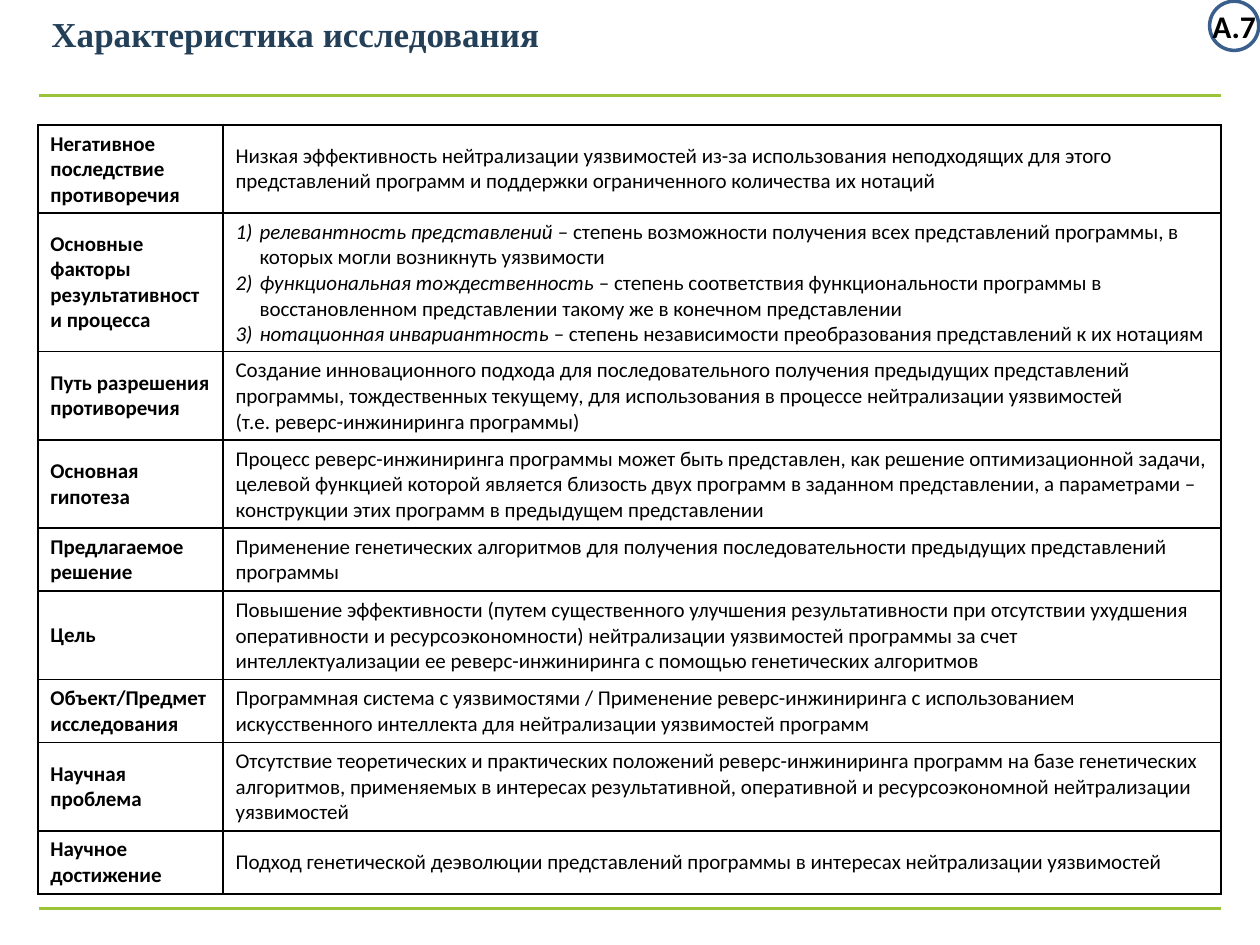
"""Build the slide with the research summary table."""
from lxml import etree
from pptx import Presentation
from pptx.dml.color import RGBColor
from pptx.enum.shapes import MSO_CONNECTOR, MSO_SHAPE
from pptx.enum.text import MSO_ANCHOR, PP_ALIGN
from pptx.oxml import parse_xml
from pptx.oxml.ns import qn
from pptx.util import Inches, Pt

LINE = MSO_CONNECTOR.STRAIGHT
OVAL = MSO_SHAPE.OVAL
MIDDLE = MSO_ANCHOR.MIDDLE
CENTER = PP_ALIGN.CENTER

BLACK = RGBColor(0, 0, 0)
WHITE = RGBColor(255, 255, 255)
GREEN = RGBColor(0x9B, 0xC4, 0x38)
BLUE = RGBColor(0x3A, 0x5F, 0x8C)
NAVY = RGBColor(0x24, 0x40, 0x58)

WIDE, HIGH = 10, 7.5
EDGE = 0.31
COLS = 1.47, 7.92
ROW = 0.41
HANG = Inches(0.19)
NS = "http://schemas.openxmlformats.org/drawingml/2006/main"

FACTORS = [
    ("релевантность представлений ",
     "– степень возможности получения всех представлений программы, "
     "в которых могли возникнуть уязвимости"),
    ("функциональная тождественность ",
     "– степень соответствия функциональности программы в восстановленном "
     "представлении такому же в конечном представлении"),
    ("нотационная инвариантность ",
     "– степень независимости преобразования представлений к их нотациям"),
]

ROWS = [
    (["Негативное последствие", "противоречия"],
     ["Низкая эффективность нейтрализации уязвимостей из-за использования "
      "неподходящих для этого представлений программ и поддержки "
      "ограниченного количества их нотаций"]),
    (["Основные факторы результативности процесса"], FACTORS),
    (["Путь разрешения противоречия"],
     ["Создание инновационного подхода для последовательного получения "
      "предыдущих представлений программы, тождественных текущему, для "
      "использования в процессе нейтрализации уязвимостей\n"
      "(т.е. реверс-инжиниринга программы)"]),
    (["Основная гипотеза"],
     ["Процесс реверс-инжиниринга программы может быть представлен, как "
      "решение оптимизационной задачи, целевой функцией которой является "
      "близость двух программ в заданном представлении, а параметрами – "
      "конструкции этих программ в предыдущем представлении"]),
    (["Предлагаемое решение"],
     ["Применение генетических алгоритмов для получения последовательности "
      "предыдущих представлений программы"]),
    (["Цель"],
     ["Повышение эффективности (путем существенного улучшения "
      "результативности при отсутствии ухудшения оперативности и "
      "ресурсоэкономности) нейтрализации уязвимостей программы за счет "
      "интеллектуализации ее реверс-инжиниринга с помощью генетических "
      "алгоритмов"]),
    (["Объект/Предмет исследования"],
     ["Программная система с уязвимостями / Применение реверс-инжиниринга с "
      "использованием искусственного интеллекта для нейтрализации "
      "уязвимостей программ"]),
    (["Научная проблема"],
     ["Отсутствие теоретических и практических положений реверс-инжиниринга "
      "программ на базе генетических алгоритмов, применяемых в интересах "
      "результативной, оперативной и ресурсоэкономной нейтрализации "
      "уязвимостей"]),
    (["Научное достижение"],
     ["Подход генетической деэволюции представлений программы в интересах "
      "нейтрализации уязвимостей"]),
]


def style(para, size, bold, color=BLACK, face="Calibri"):
    """Format every run of a paragraph."""
    for run in para.runs:
        font = run.font
        font.name, font.size, font.bold = face, Pt(size), bold
        font.color.rgb = color


def add_rule(slide, top):
    """Draw a green rule between the side margins."""
    rule = slide.shapes.add_connector(
        LINE, Inches(EDGE), Inches(top), Inches(WIDE - EDGE), Inches(top))
    rule.line.color.rgb = GREEN
    rule.line.width = Pt(1.5)
    etree.SubElement(rule._element.spPr, qn("a:effectLst"))


def add_title(slide, text):
    """Write the slide title."""
    box = slide.shapes.add_textbox(
        Inches(EDGE), Inches(0.05), Inches(9.39), Inches(0.44))
    frame = box.text_frame
    frame.word_wrap = True
    frame.text = text
    style(frame.paragraphs[0], 20, True, NAVY, "Times New Roman")


def add_badge(slide, text):
    """Draw the round badge in the top right corner."""
    side = 0.39
    badge = slide.shapes.add_shape(
        OVAL, Inches(WIDE - side - 0.01), Inches(0.01),
        Inches(side), Inches(side))
    badge.shadow.inherit = False
    badge.fill.solid()
    badge.fill.fore_color.rgb = WHITE
    badge.line.color.rgb = BLUE
    badge.line.width = Pt(2)
    frame = badge.text_frame
    frame.margin_left = frame.margin_right = 0
    frame.margin_top = frame.margin_bottom = 0
    frame.word_wrap = False
    frame.vertical_anchor = MIDDLE
    frame.text = text
    para = frame.paragraphs[0]
    para.alignment = CENTER
    style(para, 18, True)


def add_edges(cell):
    """Give a cell thin black borders and no fill."""
    props = cell._tc.get_or_add_tcPr()
    for side in "LRTB":
        props.append(parse_xml(
            f'<a:ln{side} xmlns:a="{NS}" w="{Pt(1)}"><a:solidFill>'
            f'<a:srgbClr val="{BLACK}"/></a:solidFill></a:ln{side}>'))
    cell.fill.background()


def add_item(para, term, text):
    """Write a numbered item that opens with an italic term."""
    for part, slant in ((term, True), (text, False)):
        run = para.add_run()
        run.text = part
        run.font.italic = slant
    props = para._p.get_or_add_pPr()
    props.set("marL", str(HANG))
    props.set("indent", str(-HANG))
    etree.SubElement(props, qn("a:buFont"), typeface="+mj-lt")
    etree.SubElement(props, qn("a:buAutoNum"), type="arabicParenR")


def fill_cell(cell, parts, bold):
    """Write paragraphs or numbered items into a cell."""
    cell.vertical_anchor = MIDDLE
    add_edges(cell)
    frame = cell.text_frame
    for num, part in enumerate(parts):
        para = frame.add_paragraph() if num else frame.paragraphs[0]
        if isinstance(part, tuple):
            add_item(para, *part)
        else:
            para.text = part
        style(para, 12, bold)


def add_grid(slide, rows):
    """Build the table of headings and statements."""
    grid = slide.shapes.add_table(
        len(rows), len(COLS), Inches(0.3), Inches(0.99),
        Inches(sum(COLS)), Inches(ROW * len(rows))).table
    grid.first_row = grid.horz_banding = False
    for col, width in zip(grid.columns, COLS):
        col.width = Inches(width)
    for num, (head, body) in enumerate(rows):
        fill_cell(grid.cell(num, 0), head, True)
        fill_cell(grid.cell(num, 1), body, False)


def main():
    """Assemble and save the slide."""
    deck = Presentation()
    deck.slide_width, deck.slide_height = Inches(WIDE), Inches(HIGH)
    slide = deck.slides.add_slide(deck.slide_layouts[6])
    for top in (HIGH - 0.29, 0.76):
        add_rule(slide, top)
    add_title(slide, "Характеристика исследования")
    add_grid(slide, ROWS)
    add_badge(slide, "А.7")
    deck.save("out.pptx")


if __name__ == "__main__":
    main()
